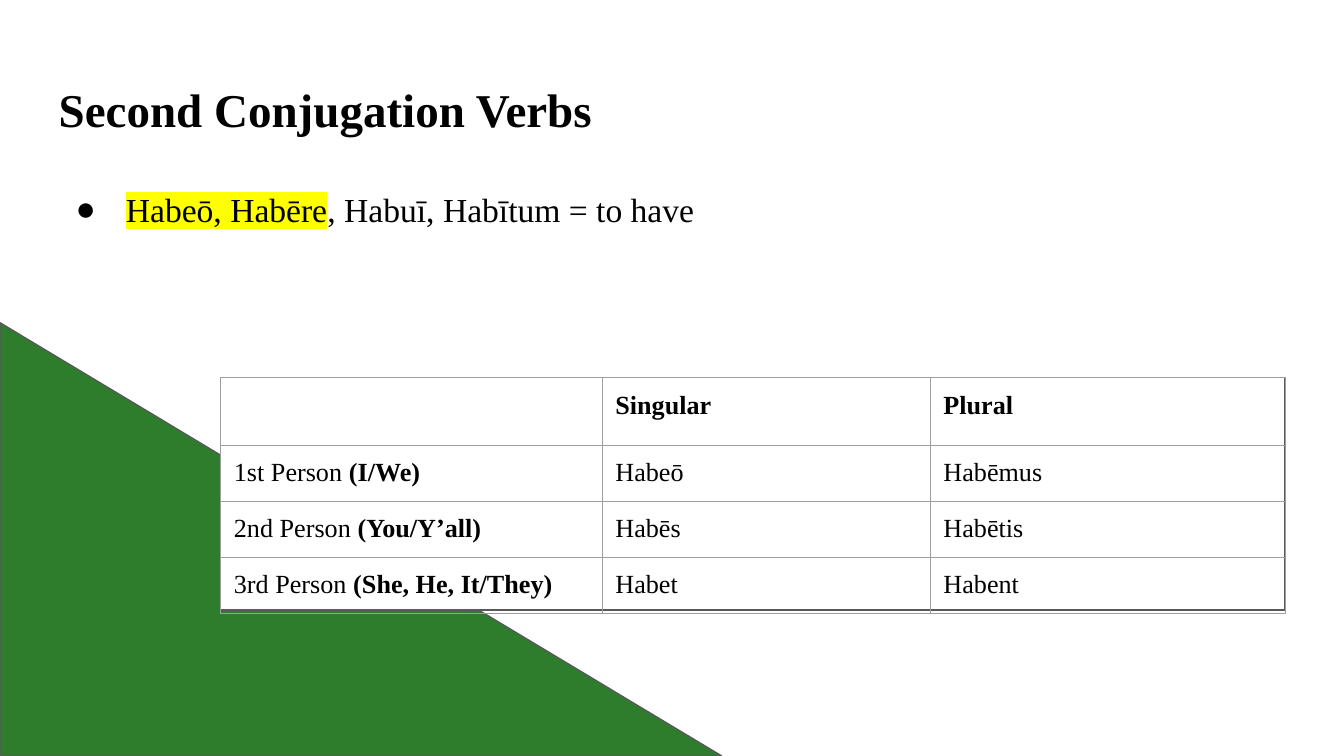
from dataclasses import dataclass

from lxml import etree
from pptx import Presentation
from pptx.dml.color import RGBColor
from pptx.enum import shapes, text
from pptx.oxml import ns
from pptx.util import Cm, Pt


@dataclass(frozen=True)
class Theme:
    font: str = "Times New Roman"
    ink: str = "000000"
    paper: str = "FFFFFF"
    green: str = "2D7D2D"
    outline: str = "595959"
    grid: str = "9E9E9E"
    marker: str = "FFFF00"
    title: float = 25.2
    body: float = 18
    cell: float = 14
    line: float = 0.75
    inset: float = 0.25


T = Theme()


def sub(parent, tag, **attrs):
    return etree.SubElement(parent, ns.qn(tag), attrs)


def place(sp, box):
    sp.left, sp.top, sp.width, sp.height = (Cm(v) for v in box)


def inset(o):
    o.margin_left = o.margin_right = o.margin_top = o.margin_bottom = Cm(T.inset)


def write(p, runs, size):
    for content, bold in runs:
        r = p.add_run()
        r.text = content
        r.font.bold = bold
    for f in (p.font, *(r.font for r in p.runs)):
        f.name, f.size = T.font, Pt(size)
        f.color.rgb = RGBColor.from_string(T.ink)


def fill_placeholder(sp, box, runs, size, anchor):
    place(sp, box)
    tf = sp.text_frame
    inset(tf)
    tf.word_wrap = True
    tf.auto_size = text.MSO_AUTO_SIZE.NONE
    tf.vertical_anchor = anchor
    p = tf.paragraphs[0]
    p.alignment = text.PP_ALIGN.LEFT
    p.space_before = Pt(0)
    write(p, runs, size)
    return p


def add_panel(s, kind, box, color):
    sp = s.shapes.add_shape(kind, *(Cm(v) for v in box))
    sp.shadow.inherit = False
    sp.fill.solid()
    sp.fill.fore_color.rgb = RGBColor.from_string(color)
    sp.line.color.rgb = RGBColor.from_string(T.outline)
    sp.line.width = Pt(T.line)


def add_title(s, box, title):
    fill_placeholder(s.shapes.title, box, [(title, True)], T.title,
                     text.MSO_ANCHOR.BOTTOM)


def add_principal_parts(s, box, marked, rest):
    p = fill_placeholder(s.placeholders[1], box, [(marked, False), (rest, False)],
                         T.body, text.MSO_ANCHOR.TOP)
    p.line_spacing = 1.15
    pPr = p._p.get_or_add_pPr()
    pPr.set("marL", str(Cm(1.27)))
    pPr.set("indent", str(Cm(-0.95)))
    bullet = etree.Element(ns.qn("a:buClr"))
    sub(bullet, "a:srgbClr", val=T.ink)
    font = etree.Element(ns.qn("a:buFont"), typeface=T.font)
    char = etree.Element(ns.qn("a:buChar"), char="●")
    for el in (bullet, font, char):
        pPr.find(ns.qn("a:defRPr")).addprevious(el)
    highlight = etree.Element(ns.qn("a:highlight"))
    sub(highlight, "a:srgbClr", val=T.marker)
    p.runs[0]._r.rPr.find(ns.qn("a:solidFill")).addnext(highlight)


def border(cell):
    tcPr = cell._tc.get_or_add_tcPr()
    for i, side in enumerate(("a:lnL", "a:lnR", "a:lnT", "a:lnB")):
        ln = etree.Element(ns.qn(side), w=str(Pt(T.line)))
        sub(sub(ln, "a:solidFill"), "a:srgbClr", val=T.grid)
        tcPr.insert(i, ln)


def add_conjugation(s, box, widths, heights, rows):
    add_panel(s, shapes.MSO_SHAPE.RECTANGLE, box, T.paper)
    table = s.shapes.add_table(len(rows), len(widths),
                               *(Cm(v) for v in box)).table
    table.first_row = table.horz_banding = False
    for col, w in zip(table.columns, widths):
        col.width = Cm(w)
    for row, h, values in zip(table.rows, heights, rows):
        row.height = Cm(h)
        for cell, runs in zip(row.cells, values):
            inset(cell)
            cell.fill.background()
            border(cell)
            if runs:
                write(cell.text_frame.paragraphs[0], runs, T.cell)


def main():
    prs = Presentation()
    prs.slide_width, prs.slide_height = Cm(25.4), Cm(14.29)
    s = prs.slides.add_slide(prs.slide_layouts[1])
    add_panel(s, shapes.MSO_SHAPE.RIGHT_TRIANGLE, (0, 6.1, 13.64, 8.19), T.green)
    add_title(s, (0.86, 1.24, 23.67, 1.6), "Second Conjugation Verbs")
    add_principal_parts(s, (0.86, 3.2, 23.67, 9.5),
                        "Habeō, Habēre", ", Habuī, Habītum = to have")
    forms = [
        ("1st Person ", "(I/We)", "Habeō", "Habēmus"),
        ("2nd Person ", "(You/Y’all)", "Habēs", "Habētis"),
        ("3rd Person ", "(She, He, It/They)", "Habet", "Habent"),
    ]
    rows = [([], [("Singular", True)], [("Plural", True)])]
    rows += [([(person, False), (pronouns, True)], [(one, False)], [(many, False)])
             for person, pronouns, one, many in forms]
    add_conjugation(s, (4.17, 7.14, 20.12, 4.39), (7.21, 6.2, 6.71),
                    (1.23, 1.06, 1.06, 1.06), rows)
    prs.save("out.pptx")


if __name__ == "__main__":
    main()
